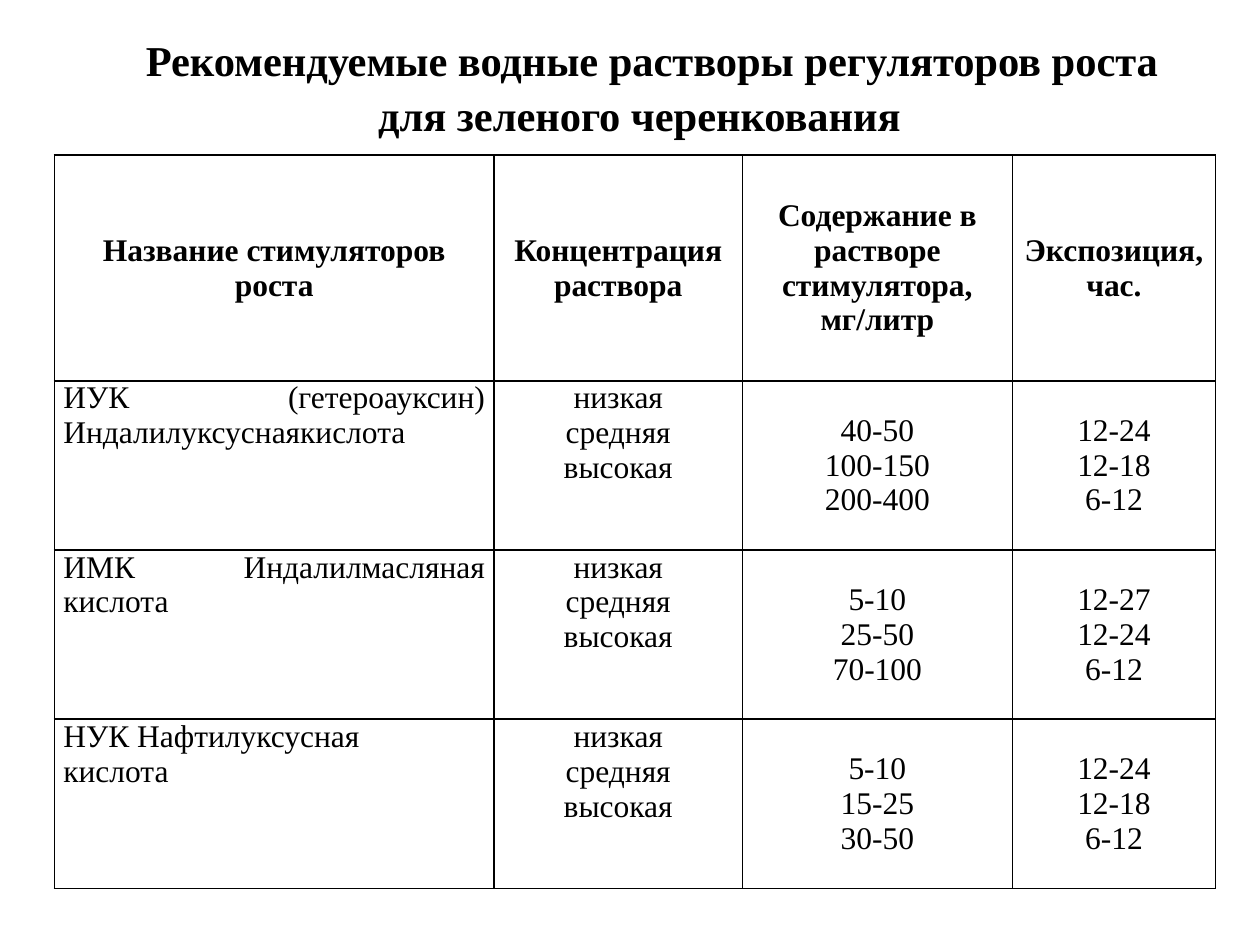
from pptx import Presentation
from pptx.dml.color import RGBColor
from pptx.enum.text import MSO_ANCHOR as Anchor, PP_ALIGN as Align
from pptx.oxml import parse_xml
from pptx.util import Pt

BLACK = RGBColor(0, 0, 0)
FONT = "Times New Roman"
NS = "http://schemas.openxmlformats.org/drawingml/2006/main"

TITLE = "Рекомендуемые водные растворы регуляторов роста\vдля зеленого черенкования"
HEADS = [
    "Название стимуляторов роста",
    "Концентрация раствора",
    "Содержание в растворе стимулятора, мг/литр",
    "Экспозиция, час.",
]
LEVELS = "низкая\nсредняя\nвысокая"
ROWS = [
    ["ИУК  (гетероауксин) Индалилуксуснаякислота ", LEVELS,
     "40-50\n100-150\n200-400", "12-24\n12-18\n6-12"],
    ["ИМК  Индалилмасляная кислота ", LEVELS,
     "5-10\n25-50\n70-100", "12-27\n12-24\n6-12"],
    ["НУК Нафтилуксусная \nкислота ", LEVELS,
     "5-10\n15-25\n30-50", "12-24\n12-18\n6-12"],
]
WIDTHS = [251.4, 141.8, 154.4, 116]
HEIGHTS = [129, 96.7, 96.7, 96.7]


def put_text(frame, text, size=18, bold=False, align=Align.CENTER, space=None, indent=0):
    """Fill a text frame, one paragraph for each line of text."""
    frame.word_wrap = True
    frame.text = text
    for para in frame.paragraphs:
        para.alignment = align
        if space:
            para.line_spacing = space
        if indent:
            para._p.get_or_add_pPr().set("indent", str(Pt(indent)))
        for run in para.runs:
            font = run.font
            font.name, font.size, font.bold = FONT, Pt(size), bold
            font.color.rgb = BLACK


def add_edges(cell, width=1):
    """Draw a solid line on all four sides of a cell."""
    props = cell._tc.get_or_add_tcPr()
    for spot, side in enumerate("LRTB"):
        props.insert(spot, parse_xml(
            f'<a:ln{side} xmlns:a="{NS}" w="{Pt(width)}"><a:solidFill>'
            f'<a:srgbClr val="{BLACK}"/></a:solidFill></a:ln{side}>'))


def add_title(slide, left, top, width, height):
    """Place the slide heading in its box."""
    box = slide.shapes.add_textbox(Pt(left), Pt(top), Pt(width), Pt(height))
    frame = box.text_frame
    frame.vertical_anchor = Anchor.MIDDLE
    put_text(frame, TITLE, size=24.3, bold=True, space=1.08, indent=14.4)


def add_grid(slide, left, top):
    """Place the table of growth regulators."""
    data = [HEADS] + ROWS
    table = slide.shapes.add_table(
        len(data), len(HEADS), Pt(left), Pt(top),
        Pt(sum(WIDTHS)), Pt(sum(HEIGHTS))).table
    table.first_row = table.horz_banding = False
    for col, width in zip(table.columns, WIDTHS):
        col.width = Pt(width)
    for row, height in zip(table.rows, HEIGHTS):
        row.height = Pt(height)
    for r, texts in enumerate(data):
        for c, text in enumerate(texts):
            cell = table.cell(r, c)
            head = r == 0
            cell.fill.background()
            cell.margin_left = cell.margin_right = Pt(5.2)
            cell.margin_top = cell.margin_bottom = 0
            cell.vertical_anchor = Anchor.MIDDLE if head or c > 1 else Anchor.TOP
            align = Align.CENTER if head or c else Align.JUSTIFY
            put_text(cell.text_frame, text, bold=head, align=align)
            add_edges(cell)


def main():
    """Build the slide and save it."""
    deck = Presentation()
    deck.slide_width, deck.slide_height = Pt(720), Pt(540)
    slide = deck.slides.add_slide(deck.slide_layouts[6])
    add_title(slide, 25.2, 15.1, 680.4, 67)
    add_grid(slide, 31, 88.6)
    deck.save("out.pptx")


if __name__ == "__main__":
    main()
